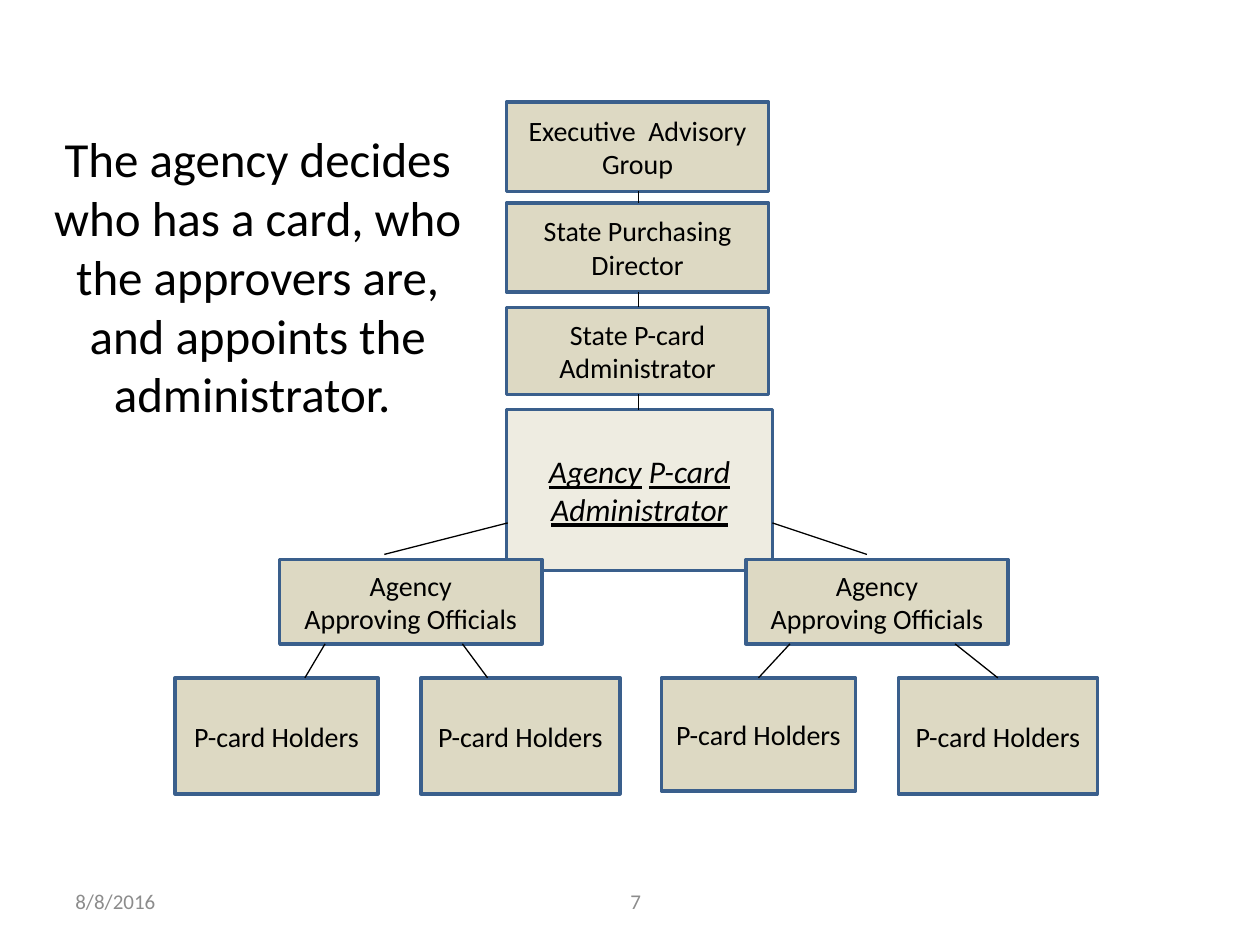
from dataclasses import dataclass

from lxml.etree import SubElement
from pptx import Presentation
from pptx.dml.color import RGBColor
from pptx.enum.shapes import MSO_CONNECTOR, MSO_SHAPE
from pptx.enum.text import MSO_ANCHOR, MSO_AUTO_SIZE, PP_ALIGN
from pptx.oxml.ns import qn
from pptx.util import Inches, Pt


@dataclass(frozen=True)
class Theme:
    """Colours, font and type sizes of the slide."""
    font: str = "Calibri"
    ink: str = "000000"
    mute: str = "8C8C8C"
    tan: str = "DDD9C3"
    pale: str = "EEECE1"
    edge: str = "3A5F8C"
    head: int = 28
    lead: int = 18
    body: int = 16
    foot: int = 12


LOOK = Theme()


def write(shape, *lines, size=LOOK.body, color=LOOK.ink, align=PP_ALIGN.CENTER,
          anchor=MSO_ANCHOR.MIDDLE, slant=False, under=False):
    """Fill a shape with paragraphs, whose runs are parted by a bar."""
    frame = shape.text_frame
    frame.word_wrap = True
    frame.auto_size = MSO_AUTO_SIZE.NONE
    frame.vertical_anchor = anchor
    for index, line in enumerate(lines):
        para = frame.add_paragraph() if index else frame.paragraphs[0]
        para.alignment = align
        for part in line.split("|"):
            run = para.add_run()
            run.text = part
            font = run.font
            font.name, font.size = LOOK.font, Pt(size)
            font.color.rgb = RGBColor.from_string(color)
            if slant:
                font.italic = True
            if under:
                font.underline = bool(part.strip())


def block(slide, box, *lines, fill=LOOK.tan, **style):
    """Draw one outlined box of the chart with its label."""
    shape = slide.shapes.add_shape(MSO_SHAPE.RECTANGLE, *map(Inches, box))
    shape.shadow.inherit = False
    shape.fill.solid()
    shape.fill.fore_color.rgb = RGBColor.from_string(fill)
    shape.line.color.rgb = RGBColor.from_string(LOOK.edge)
    shape.line.width = Pt(2)
    write(shape, *lines, **style)


def link(slide, start, end):
    """Join two points with a thin line."""
    line = slide.shapes.add_connector(
        MSO_CONNECTOR.STRAIGHT, *map(Inches, (*start, *end)))
    line.line.color.rgb = RGBColor.from_string(LOOK.ink)
    line.line.width = Pt(0.75)
    SubElement(line._element.spPr, qn("a:effectLst"))


def title(slide, box):
    """Place the statement in the title placeholder."""
    shape = slide.shapes.title
    shape.left, shape.top, shape.width, shape.height = map(Inches, box)
    write(shape, "The agency decides who has a card, who the approvers are,",
          "and appoints the", "administrator. ",
          size=LOOK.head, anchor=MSO_ANCHOR.TOP)


def chain(slide, box):
    """Stack the four levels of command and join them."""
    left, top, width, height = box
    wide = 2.08
    mid = left + wide / 2 + 0.01
    levels = [(0, 0.71, "Executive  Advisory Group"),
              (0.8, 0.71, "State Purchasing Director"),
              (1.63, 0.69, "State P-card Administrator")]
    low = 2.44
    for drop, tall, label in levels:
        block(slide, (left, top + drop, wide, tall), label)
    block(slide, (left, top + low, width, height - low),
          "Agency| |P-card Administrator", fill=LOOK.pale,
          size=LOOK.lead, slant=True, under=True)
    nexts = [drop for drop, *_ in levels[1:]] + [low]
    for (drop, tall, _), below in zip(levels, nexts):
        link(slide, (mid, top + drop + tall), (mid, top + below))


def branch(slide, box, shift, sizes, joins, arm):
    """Draw the approving officials above two card holders."""
    left, top, width, height = box
    tall, gap = 0.67, 0.94
    base = top + gap
    block(slide, (left + shift, top, 2.08, tall),
          "Agency", "Approving Officials")
    for index, (wide, high) in enumerate(sizes):
        edge = left + index * (width - wide)
        block(slide, (edge, base, wide, high), "P-card Holders")
    for start, end in joins:
        link(slide, (left + start, top + tall), (left + end, base))
    start, end = arm
    link(slide, (left + start, top - 0.29), (left + end, top - 0.04))


def footer(slide, box):
    """Set the date and the page number."""
    left, top, width, height = box
    page = 1.09
    for x, wide, label, align in [
            (left, 2.33, "8/8/2016", PP_ALIGN.LEFT),
            (left + width - page, page, "7", PP_ALIGN.CENTER)]:
        text = slide.shapes.add_textbox(*map(Inches, (x, top, wide, height)))
        write(text, label, size=LOOK.foot, color=LOOK.mute, align=align)


def main():
    """Build and save the slide."""
    deck = Presentation()
    deck.slide_width, deck.slide_height = Inches(10), Inches(7.5)
    slide = deck.slides.add_slide(deck.slide_layouts[5])
    title(slide, (0.17, 0.97, 3.75, 2.46))
    chain(slide, (4.02, 0.81, 2.11, 3.72))
    branch(slide, (1.39, 4.44, 3.53, 1.86), shift=0.83,
           sizes=[(1.61, 0.92), (1.58, 0.92)],
           joins=[(1.19, 1.03), (2.28, 2.48)], arm=(2.64, 1.66))
    branch(slide, (5.25, 4.44, 3.46, 1.86), shift=0.67,
           sizes=[(1.54, 0.9), (1.58, 0.92)],
           joins=[(1.02, 0.77), (2.33, 2.67)], arm=(0.88, 1.63))
    footer(slide, (0.5, 6.95, 5.09, 0.4))
    deck.save("out.pptx")


if __name__ == "__main__":
    main()
